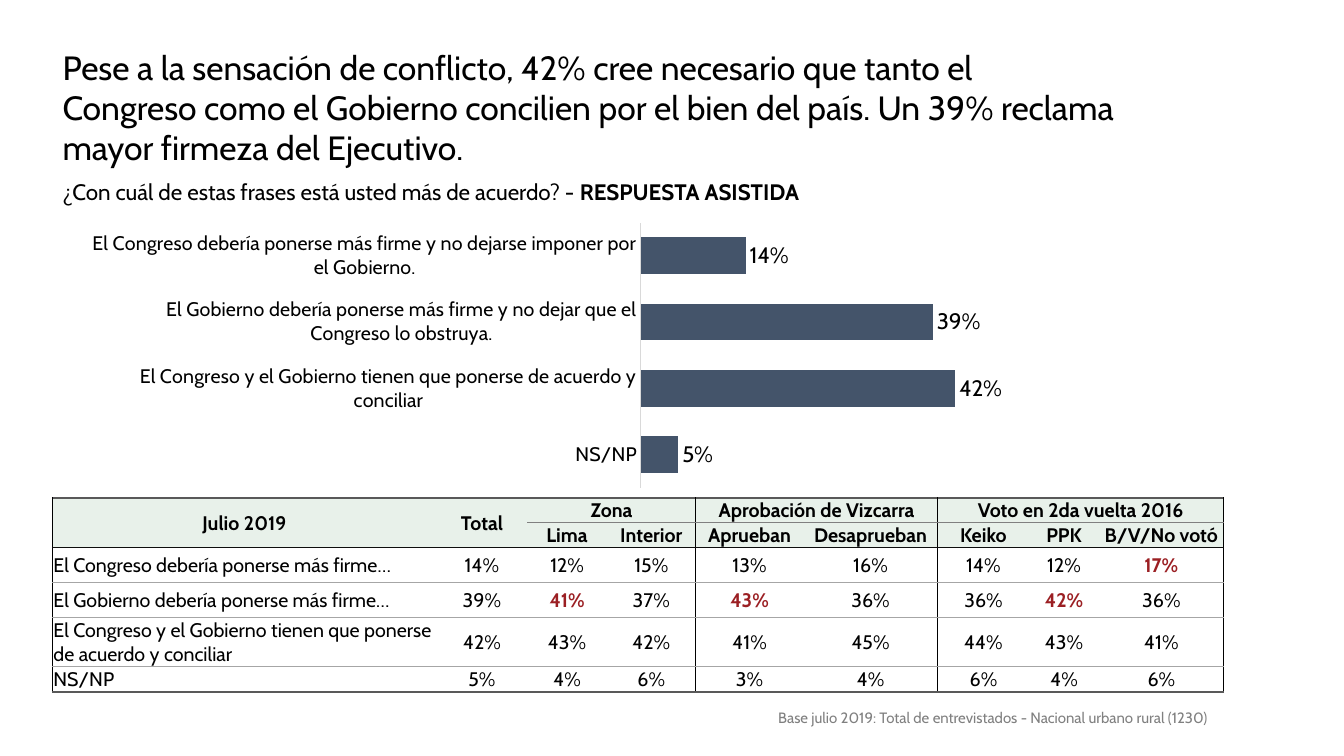
from dataclasses import dataclass

from lxml import etree
from pptx import Presentation
from pptx.chart.data import CategoryChartData
from pptx.dml.color import RGBColor
from pptx.enum.chart import XL_CHART_TYPE, XL_LABEL_POSITION, XL_TICK_LABEL_POSITION, XL_TICK_MARK
from pptx.enum.text import MSO_ANCHOR, MSO_AUTO_SIZE, PP_ALIGN
from pptx.oxml import parse_xml
from pptx.oxml.ns import nsdecls, qn
from pptx.util import Inches, Pt

BAR = XL_CHART_TYPE.BAR_CLUSTERED
OUTSIDE = XL_LABEL_POSITION.OUTSIDE_END
NO_LABELS = XL_TICK_LABEL_POSITION.NONE
NO_TICKS = XL_TICK_MARK.NONE
MIDDLE, TOP = MSO_ANCHOR.MIDDLE, MSO_ANCHOR.TOP
NO_FIT = MSO_AUTO_SIZE.NONE
LEFT, CENTER, JUSTIFY = PP_ALIGN.LEFT, PP_ALIGN.CENTER, PP_ALIGN.JUSTIFY


@dataclass(frozen=True)
class Theme:
    font: str = "Cabin"
    ink: str = "000000"
    accent: str = "9B1F23"
    bar: str = "44546A"
    axis: str = "D9D9D9"
    header: str = "E8F1EA"
    note: str = "808080"
    frame: str = "595959"
    header_end: str = "0D0D0D"
    rule: str = "A6A6A6"
    title_size: float = 24
    question_size: float = 16
    value_size: float = 16
    body_size: float = 14
    note_size: float = 10.7


THEME = Theme()
TITLE = ("Pese a la sensación de conflicto, 42% cree necesario que tanto el Congreso como el "
         "Gobierno concilien por el bien del país. Un 39% reclama mayor firmeza del Ejecutivo.")
QUESTION = "¿Con cuál de estas frases está usted más de acuerdo? - "
NOTE = "Base julio 2019: Total de entrevistados - Nacional urbano rural (1230)"
ANSWERS = [
    ("NS/NP", 0.05),
    ("El Congreso y el Gobierno tienen que ponerse de acuerdo y conciliar", 0.42),
    ("El Gobierno debería ponerse más firme y no dejar que el Congreso lo obstruya.", 0.39),
    ("El Congreso debería ponerse más firme y no dejarse imponer por el Gobierno.", 0.14),
]
GROUPS = [
    ("Julio 2019", 0, 0, 1, 0),
    ("Total", 0, 1, 1, 1),
    ("Zona", 0, 2, 0, 3),
    ("Aprobación de Vizcarra", 0, 4, 0, 5),
    ("Voto en 2da vuelta 2016", 0, 6, 0, 8),
]
SUBHEADS = ["Lima", "Interior", "Aprueban", "Desaprueban", "Keiko", "PPK", "B/V/No votó"]
RESULTS = [
    ("El Congreso debería ponerse más firme…", [14, 12, 15, 13, 16, 14, 12, 17]),
    ("El Gobierno debería ponerse más firme…", [39, 41, 37, 43, 36, 36, 42, 36]),
    ("El Congreso y el Gobierno tienen que ponerse de acuerdo y conciliar",
     [42, 43, 42, 41, 45, 44, 43, 41]),
    ("NS/NP", [5, 4, 6, 3, 4, 6, 4, 6]),
]
HIGHLIGHTS = {(2, 8), (3, 2), (3, 4), (3, 7)}
COLUMN_WIDTHS = [3.81, 0.9, 0.79, 0.88, 1.07, 1.33, 0.91, 0.69, 1.24]
ROW_HEIGHTS = [0.24, 0.24, 0.35, 0.35, 0.48, 0.26]
HEADER_ROWS = 2
DIVIDERS = {0, 4, 6, 9}


def style_font(font, size, color=THEME.ink, bold=False):
    font.name = THEME.font
    font.size = Pt(size)
    font.bold = bold
    font.color.rgb = RGBColor.from_string(color)


def add_span(para, text, size, color=THEME.ink, bold=False):
    span = para.add_run()
    span.text = text
    style_font(span.font, size, color, bold)


def add_title(page):
    box = page.shapes.title
    box.left, box.top, box.width, box.height = map(Inches, (0.52, 0.39, 10.63, 1.34))
    frame = box.text_frame
    frame.word_wrap = True
    frame.auto_size = NO_FIT
    frame.vertical_anchor = MIDDLE
    para = frame.paragraphs[0]
    para.alignment = LEFT
    add_span(para, TITLE, THEME.title_size)


def add_text(page, place, alignment):
    box = page.shapes.add_textbox(*map(Inches, place))
    box.text_frame.word_wrap = True
    box.text_frame.vertical_anchor = TOP
    para = box.text_frame.paragraphs[0]
    para.alignment = alignment
    return para


def row_edge(edge, column):
    if edge in (0, len(ROW_HEIGHTS)):
        return THEME.frame, 1.5
    if edge == HEADER_ROWS:
        return THEME.header_end, 0.5
    if edge < HEADER_ROWS:
        return (THEME.note, 1) if column >= 2 else None
    return THEME.rule, 0.5


def column_edge(edge):
    return (THEME.ink, 1) if edge in DIVIDERS else None


def add_border(cell, side, line):
    properties = cell._tc.get_or_add_tcPr()
    border = etree.SubElement(properties, qn(f"a:{side}"))
    if line is None:
        border.set("w", "0")
        etree.SubElement(border, qn("a:noFill"))
        return
    color, width = line
    border.set("w", str(Pt(width)))
    fill = etree.SubElement(border, qn("a:solidFill"))
    etree.SubElement(fill, qn("a:srgbClr"), val=color)


def style_cell(cell, row, column):
    bottom = row + (cell.span_height if cell.is_merge_origin else 1)
    right = column + (cell.span_width if cell.is_merge_origin else 1)
    add_border(cell, "lnL", column_edge(column))
    add_border(cell, "lnR", column_edge(right))
    add_border(cell, "lnT", row_edge(row, column))
    add_border(cell, "lnB", row_edge(bottom, column))
    if row < HEADER_ROWS:
        cell.fill.solid()
        cell.fill.fore_color.rgb = RGBColor.from_string(THEME.header)
    else:
        cell.fill.background()
    cell.vertical_anchor = MIDDLE
    cell.margin_left = cell.margin_right = cell.margin_top = Inches(0.01)
    cell.margin_bottom = 0


def table_texts():
    texts = {(row, column): text for text, row, column, _, _ in GROUPS}
    texts.update({(1, column): text for column, text in enumerate(SUBHEADS, 2)})
    for row, (label, shares) in enumerate(RESULTS, HEADER_ROWS):
        texts[row, 0] = label
        texts.update({(row, column): f"{share}%" for column, share in enumerate(shares, 1)})
    return texts


def add_results_table(page):
    table = page.shapes.add_table(len(ROW_HEIGHTS), len(COLUMN_WIDTHS), Inches(0.52), Inches(4.94),
                                  Inches(sum(COLUMN_WIDTHS)), Inches(sum(ROW_HEIGHTS))).table
    table.first_row = table.horz_banding = False
    for column, width in zip(table.columns, COLUMN_WIDTHS):
        column.width = Inches(width)
    for row, height in zip(table.rows, ROW_HEIGHTS):
        row.height = Inches(height)
    for _, top, left, bottom, right in GROUPS:
        table.cell(top, left).merge(table.cell(bottom, right))
    texts = table_texts()
    for row in range(len(ROW_HEIGHTS)):
        for column in range(len(COLUMN_WIDTHS)):
            cell = table.cell(row, column)
            style_cell(cell, row, column)
            para = cell.text_frame.paragraphs[0]
            para.font.size = Pt(THEME.body_size)
            if (row, column) not in texts:
                continue
            header, marked = row < HEADER_ROWS, (row, column) in HIGHLIGHTS
            para.alignment = CENTER if header or column else LEFT
            add_span(para, texts[row, column], THEME.body_size,
                     THEME.accent if marked else THEME.ink, header or marked)


def add_answers_chart(page):
    data = CategoryChartData(number_format="0%")
    data.categories = [answer for answer, _ in ANSWERS]
    data.add_series("Series 1", [share for _, share in ANSWERS])
    chart = page.shapes.add_chart(BAR, *map(Inches, (0.86, 2.18, 10.78, 2.83)), data).chart
    chart.has_legend = chart.has_title = False
    style_font(chart.font, THEME.body_size)
    answers, shares = chart.category_axis, chart.value_axis
    for axis in (answers, shares):
        axis.major_tick_mark = axis.minor_tick_mark = NO_TICKS
        axis.has_major_gridlines = False
    style_font(answers.tick_labels.font, THEME.body_size)
    answers.format.line.color.rgb = RGBColor.from_string(THEME.axis)
    answers.format.line.width = Pt(0.75)
    shares.tick_label_position = NO_LABELS
    shares.minimum_scale, shares.maximum_scale = 0, 0.45
    shares.format.line.fill.background()
    plot = chart.plots[0]
    plot.gap_width = 80
    plot.vary_by_categories = False
    bars = plot.series[0]
    bars.format.fill.solid()
    bars.format.fill.fore_color.rgb = RGBColor.from_string(THEME.bar)
    labels = bars.data_labels
    labels.show_value = True
    labels.number_format, labels.number_format_is_linked = "0%", False
    labels.position = OUTSIDE
    style_font(labels.font, THEME.value_size)
    set_plot_area(chart, x=0.51, y=0.01, w=0.31, h=0.93)


def set_plot_area(chart, **fractions):
    area = chart._chartSpace.chart.plotArea
    for layout in area.findall(qn("c:layout")):
        area.remove(layout)
    modes = '<c:layoutTarget val="inner"/><c:xMode val="edge"/><c:yMode val="edge"/>'
    sizes = "".join(f'<c:{name} val="{value}"/>' for name, value in fractions.items())
    area.insert(0, parse_xml(f'<c:layout {nsdecls("c")}><c:manualLayout>{modes}{sizes}'
                             "</c:manualLayout></c:layout>"))


def main():
    deck = Presentation()
    deck.slide_width, deck.slide_height = Inches(13.33), Inches(7.5)
    page = deck.slides.add_slide(deck.slide_layouts[5])
    note = add_text(page, (7.62, 7, 6.95, 0.26), JUSTIFY)
    note.line_spacing = 0.9
    add_span(note, NOTE, THEME.note_size, THEME.note)
    add_title(page)
    add_results_table(page)
    add_answers_chart(page)
    question = add_text(page, (0.52, 1.72, 11.12, 0.37), LEFT)
    add_span(question, QUESTION, THEME.question_size)
    add_span(question, "RESPUESTA ASISTIDA", THEME.question_size, bold=True)
    deck.save("out.pptx")


if __name__ == "__main__":
    main()
